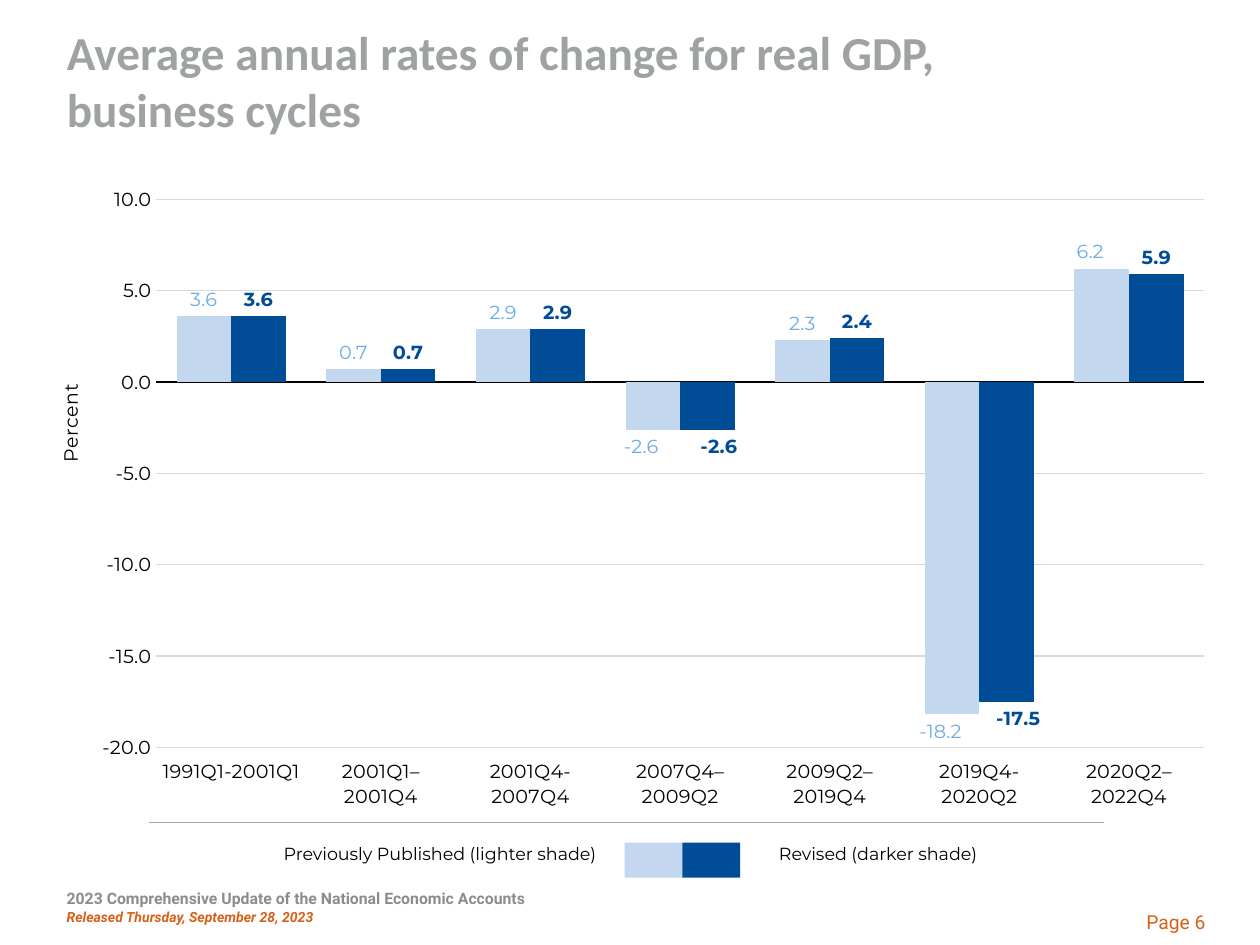
from typing import NamedTuple

from lxml import etree
from pptx import Presentation, util as u
from pptx.chart.data import CategoryChartData
from pptx.dml.color import RGBColor
from pptx.enum import chart as ch, shapes, text
from pptx.oxml.ns import qn

BLACK, LIGHT, DARK, ORANGE = "000000", "C3D7EE", "004C97", "D86018"
VALUE_FORMAT = "#,##0.0"


class Box(NamedTuple):
    left: float
    top: float
    width: float
    height: float

    def lengths(self) -> list:
        return [u.Pt(side) for side in self]


class Style(NamedTuple):
    font: str
    size: float
    color: str
    bold: bool = False
    italic: bool = False


class Series(NamedTuple):
    name: str
    shade: str
    values: tuple
    fill: str
    label: Style
    shifts: dict  # point index -> sideways label shift, share of chart width
    legend: Box


CYCLES = ("1991Q1-2001Q1", "2001Q1–2001Q4", "2001Q4-2007Q4", "2007Q4–2009Q2",
          "2009Q2–2019Q4", "2019Q4-2020Q2", "2020Q2–2022Q4")
AXIS = Style("Montserrat", 11, BLACK)
ESTIMATES = (
    Series("Previously Published", "lighter",
           (3.6, 0.7, 2.9, -2.6, 2.3, -18.2, 6.2), LIGHT,
           Style("Montserrat", 11, "6CACE4"), {3: -0.01, 5: -0.01, 6: -0.01},
           Box(155, 478, 198, 26)),
    Series("Revised", "darker",
           (3.6, 0.7, 2.9, -2.6, 2.4, -17.5, 5.9), DARK,
           Style("Montserrat", 11, DARK, bold=True), {3: 0.01, 5: 0.01},
           Box(438, 478, 140, 26)),
)


def rgb(color: str) -> RGBColor:
    return RGBColor.from_string(color)


def set_font(font, style: Style) -> None:
    font.name, font.size = style.font, u.Pt(style.size)
    font.bold, font.italic = style.bold, style.italic
    font.color.rgb = rgb(style.color)


def add_text(slide, box: Box, lines: list):
    frame = slide.shapes.add_textbox(*box.lengths()).text_frame
    frame.word_wrap = True
    for index, (words, style) in enumerate(lines):
        paragraph = frame.add_paragraph() if index else frame.paragraphs[0]
        paragraph.text = words
        set_font(paragraph.font, style)
    return frame


def add_swatch(slide, box: Box, color: str) -> None:
    swatch = slide.shapes.add_shape(shapes.MSO_SHAPE.RECTANGLE, *box.lengths())
    swatch.shadow.inherit = False
    swatch.fill.solid()
    swatch.fill.fore_color.rgb = rgb(color)
    swatch.line.fill.background()


def set_layout(parent, position: int, **settings) -> None:
    for old in parent.findall(qn("c:layout")):
        parent.remove(old)
    layout = etree.Element(qn("c:layout"))
    manual = etree.SubElement(layout, qn("c:manualLayout"))
    for name, value in settings.items():
        etree.SubElement(manual, qn(f"c:{name}")).set("val", str(value))
    parent.insert(position, layout)


def style_series(series, estimate: Series) -> None:
    series.format.fill.solid()
    series.format.fill.fore_color.rgb = rgb(estimate.fill)
    series.invert_if_negative = False
    labels = series.data_labels
    labels.show_value = True
    labels.number_format, labels.number_format_is_linked = VALUE_FORMAT, False
    labels.position = ch.XL_LABEL_POSITION.OUTSIDE_END
    set_font(labels.font, estimate.label)
    for index in estimate.shifts:
        label = series.points[index].data_label
        set_font(label.font, estimate.label)
        label.position = ch.XL_LABEL_POSITION.OUTSIDE_END
    for element in labels._element.findall(qn("c:dLbl")):
        index = int(element.find(qn("c:idx")).get("val"))
        set_layout(element, 1, x=estimate.shifts[index], y=0)


def add_gdp_chart(slide, box: Box) -> None:
    data = CategoryChartData(number_format=VALUE_FORMAT)
    data.categories = CYCLES
    for estimate in ESTIMATES:
        data.add_series(estimate.name, estimate.values)
    chart = slide.shapes.add_chart(
        ch.XL_CHART_TYPE.COLUMN_CLUSTERED, *box.lengths(), data).chart
    chart.has_legend = chart.has_title = False
    set_font(chart.font, AXIS)
    plot = chart.plots[0]
    plot.gap_width, plot.overlap, plot.vary_by_categories = 74, 0, False
    for series, estimate in zip(plot.series, ESTIMATES):
        style_series(series, estimate)

    # Axes
    cycles, percent = chart.category_axis, chart.value_axis
    for axis in (cycles, percent):
        axis.major_tick_mark = axis.minor_tick_mark = ch.XL_TICK_MARK.NONE
        set_font(axis.tick_labels.font, AXIS)
    cycles.tick_label_position = ch.XL_TICK_LABEL_POSITION.LOW
    cycles.format.line.color.rgb = rgb(BLACK)
    cycles.format.line.width = u.Pt(0.75)
    percent.minimum_scale, percent.maximum_scale, percent.major_unit = -20, 10, 5
    percent.tick_labels.number_format = VALUE_FORMAT
    percent.tick_labels.number_format_is_linked = False
    percent.format.line.fill.background()
    percent.major_gridlines.format.line.color.rgb = rgb("D9D9D9")
    percent.major_gridlines.format.line.width = u.Pt(0.75)
    title = percent.axis_title
    title.text_frame.text = "Percent"
    set_font(title.text_frame.paragraphs[0].font, AXIS)
    body = title._element.find(".//" + qn("a:bodyPr"))
    body.set("rot", "-5400000")
    body.set("vert", "horz")
    set_layout(title._element, 1, xMode="edge", yMode="edge", x=0, y=0.33)

    # Plot area
    area = chart._chartSpace.find(".//" + qn("c:plotArea"))
    set_layout(area, 0, layoutTarget="inner", xMode="edge", yMode="edge",
               x=0.09, y=0.034, w=0.907, h=0.888)


def add_legend(slide) -> None:
    rule = slide.shapes.add_connector(
        shapes.MSO_CONNECTOR.STRAIGHT, u.Pt(85), u.Pt(470), u.Pt(631), u.Pt(470))
    rule.line.color.rgb = rgb("A6A6A6")
    rule.line.width = u.Pt(0.75)
    etree.SubElement(rule._element.spPr, qn("a:effectLst"))

    for index, estimate in enumerate(ESTIMATES):
        add_text(slide, estimate.legend, [
            (f"{estimate.name} ({estimate.shade} shade)",
             Style("Montserrat", 10, BLACK))])
        add_swatch(slide, Box(357 + 33 * index, 481.5, 33, 20), estimate.fill)


def main() -> None:
    deck = Presentation()
    deck.slide_width, deck.slide_height = u.Pt(720), u.Pt(540)
    slide = deck.slides.add_slide(deck.slide_layouts[5])

    # Title
    title = slide.shapes.title
    title.left, title.top, title.width, title.height = Box(31, 8, 548, 72).lengths()
    frame = title.text_frame
    frame.text = "Average annual rates of change for real GDP,\vbusiness cycles"
    frame.auto_size = text.MSO_AUTO_SIZE.NONE
    frame.vertical_anchor = text.MSO_ANCHOR.MIDDLE
    frame.margin_bottom = 0
    frame.paragraphs[0].alignment = text.PP_ALIGN.LEFT
    set_font(frame.paragraphs[0].font, Style("Calibri", 27, "9EA2A2", bold=True))

    # Chart and its legend
    add_gdp_chart(slide, Box(30, 102, 660, 360))
    add_legend(slide)

    # Footer
    add_text(slide, Box(31, 504.5, 522, 35), [
        ("2023 Comprehensive Update of the National Economic Accounts",
         Style("Roboto", 9, "8C8C8C", bold=True)),
        ("Released Thursday, September 28, 2023",
         Style("Roboto", 8, ORANGE, bold=True, italic=True))])
    page = add_text(slide, Box(618, 515.5, 78, 23),
                    [("Page 6", Style("Roboto", 11, ORANGE))])
    page.vertical_anchor = text.MSO_ANCHOR.MIDDLE
    page.paragraphs[0].alignment = text.PP_ALIGN.RIGHT

    deck.save("out.pptx")


if __name__ == "__main__":
    main()
